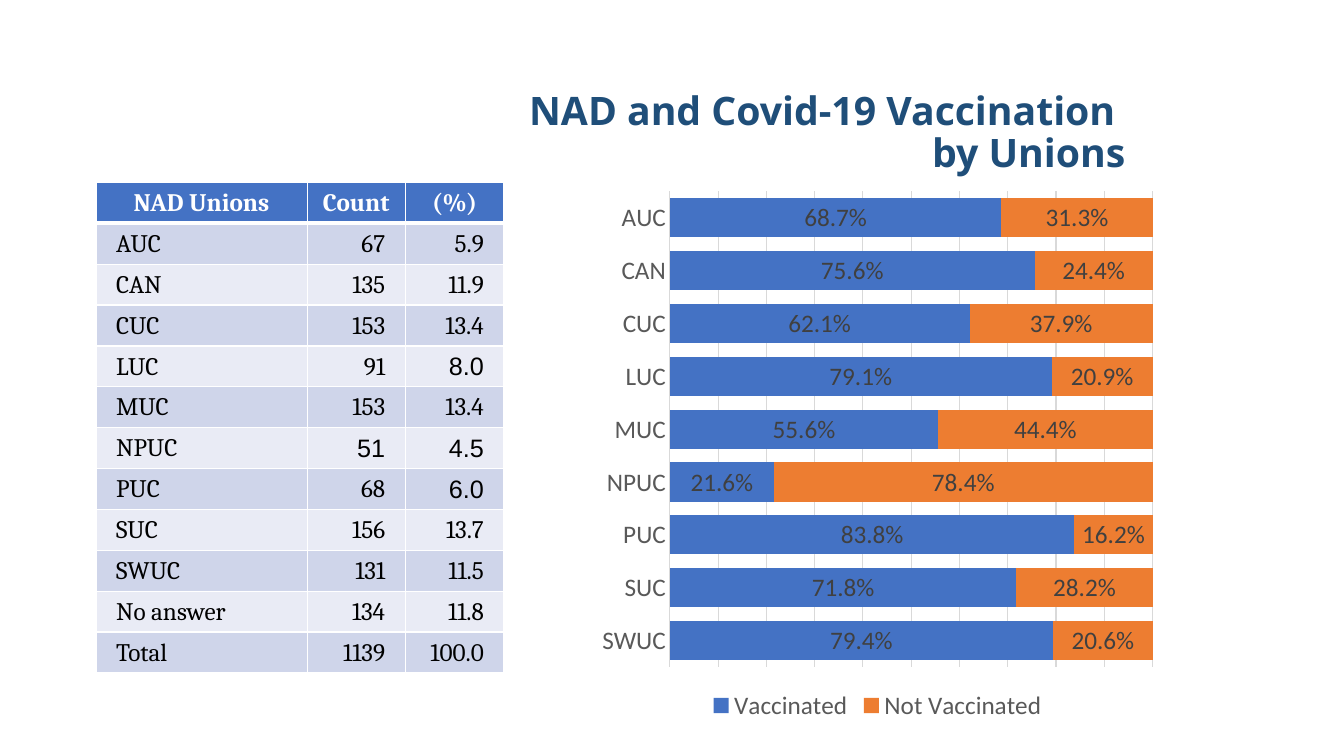
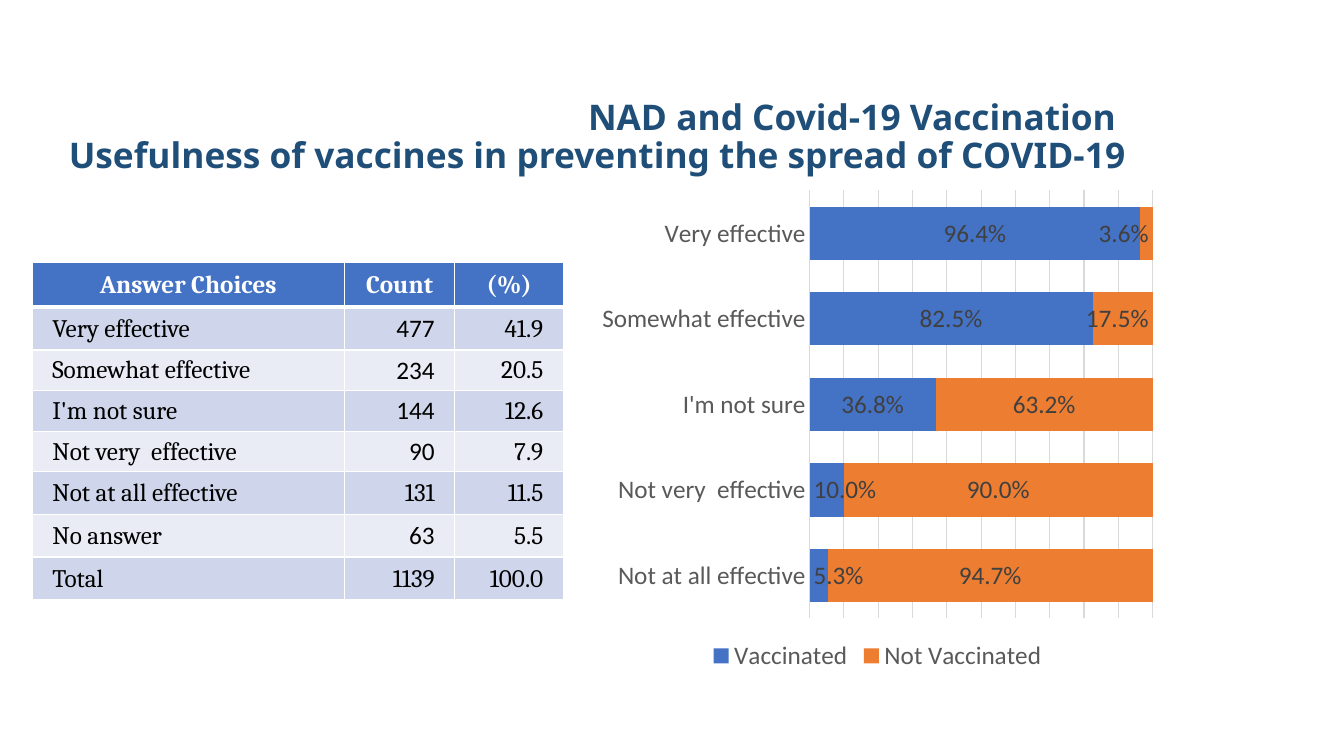
"""Build two slides on vaccination, each with a title, a count table and a stacked bar chart."""
from dataclasses import dataclass, field
from typing import Optional

from lxml.etree import SubElement
from pptx import Presentation
from pptx.chart.data import CategoryChartData
from pptx.dml.color import RGBColor
from pptx.enum.chart import XL_CHART_TYPE as ChartType
from pptx.enum.chart import XL_LABEL_POSITION as LabelPos
from pptx.enum.chart import XL_LEGEND_POSITION as LegendPos
from pptx.enum.chart import XL_TICK_MARK as Tick
from pptx.enum.text import MSO_ANCHOR as Anchor
from pptx.enum.text import PP_ALIGN as Align
from pptx.oxml.ns import qn
from pptx.util import Pt


@dataclass(frozen=True)
class Theme:
    """Colours, fonts and type sizes of the deck."""
    title: str = "1F4E79"
    white: str = "FFFFFF"
    black: str = "000000"
    header: str = "4472C4"
    bands: tuple[str, str] = ("CFD5EA", "E9EBF5")
    series: tuple[str, str] = ("4472C4", "ED7D31")
    axis_text: str = "595959"
    label_text: str = "404040"
    grid: str = "D9D9D9"
    title_font: str = "Noto Sans"
    table_font: str = "Cambria"
    chart_font: str = "Calibri"
    alt_font: str = "Arial"
    body_size: float = 18
    chart_size: float = 10


THEME = Theme()
SERIES_NAMES = ("Vaccinated", "Not Vaccinated")
PERCENT = "0.0%"


@dataclass(frozen=True)
class Box:
    """Position and size in points."""
    left: float
    top: float
    width: float
    height: float

    def emu(self) -> tuple[Pt, Pt, Pt, Pt]:
        """Return the four lengths for python-pptx."""
        return Pt(self.left), Pt(self.top), Pt(self.width), Pt(self.height)


@dataclass(frozen=True)
class Row:
    """One answer: table values, their fonts and the vaccinated share if charted."""
    label: str
    count: str
    percent: str
    vaccinated: Optional[float] = None
    count_font: str = THEME.table_font
    percent_font: str = THEME.table_font


@dataclass(frozen=True)
class Survey:
    """Everything that differs between the slides."""
    title: str
    title_size: float
    title_box: Box
    heading: str
    rows: list[Row]
    table_at: tuple[float, float]
    col_widths: tuple[float, ...]
    row_heights: tuple[float, ...]
    chart_box: Box
    gap: int
    moved_labels: dict[tuple[int, int], LabelPos] = field(default_factory=dict)


def style_font(font, size: float, color: str, name: str, bold: bool = False) -> None:
    """Set size, colour, typeface and weight."""
    font.size, font.name, font.bold = Pt(size), name, bold
    font.color.rgb = RGBColor.from_string(color)


def add_title(s, survey: Survey) -> None:
    """Place and format the title placeholder."""
    sp = s.shapes.title
    sp.left, sp.top, sp.width, sp.height = survey.title_box.emu()
    tf = sp.text_frame
    tf.word_wrap, tf.vertical_anchor = True, Anchor.BOTTOM
    p = tf.paragraphs[0]
    p.text = survey.title
    p.alignment, p.line_spacing = Align.RIGHT, 0.9
    style_font(p.font, survey.title_size, THEME.title, THEME.title_font, True)


def add_borders(cell, bottom: float) -> None:
    """Draw white borders of one point, with a given bottom width."""
    tc_pr = cell._tc.get_or_add_tcPr()
    for side, width in (("L", 1), ("R", 1), ("T", 1), ("B", bottom)):
        ln = SubElement(tc_pr, qn(f"a:ln{side}"), w=str(int(Pt(width))))
        SubElement(SubElement(ln, qn("a:solidFill")), qn("a:srgbClr"), val=THEME.white)


def fill_cell(cell, text: str, font: str, align: Align, row: int) -> None:
    """Write and format one cell; row 0 is the header."""
    header = row == 0
    add_borders(cell, 3 if header or row == 0 else 1)
    cell.fill.solid()
    fill = THEME.header if header else THEME.bands[(row - 1) % 2]
    cell.fill.fore_color.rgb = RGBColor.from_string(fill)
    cell.vertical_anchor = Anchor.MIDDLE
    cell.margin_left = Pt(14.4 if align == Align.LEFT else 0.7)
    cell.margin_right = Pt(14.4 if align == Align.RIGHT else 0.7)
    cell.margin_top, cell.margin_bottom = Pt(0.7), Pt(0)
    p = cell.text_frame.paragraphs[0]
    p.text, p.alignment = text, align
    style_font(p.font, THEME.body_size, THEME.white if header else THEME.black, font, header)


def add_count_table(s, survey: Survey) -> None:
    """Add the table of counts and percentages."""
    box = Box(*survey.table_at, sum(survey.col_widths), sum(survey.row_heights))
    table = s.shapes.add_table(len(survey.rows) + 1, 3, *box.emu()).table
    for column, width in zip(table.columns, survey.col_widths):
        column.width = Pt(width)
    for line, height in zip(table.rows, survey.row_heights):
        line.height = Pt(height)
    for c, text in enumerate((survey.heading, "Count", "(%)")):
        fill_cell(table.cell(0, c), text, THEME.table_font, Align.CENTER, 0)
    for r, row in enumerate(survey.rows, 1):
        fill_cell(table.cell(r, 0), row.label, THEME.table_font, Align.LEFT, r)
        fill_cell(table.cell(r, 1), row.count, row.count_font, Align.RIGHT, r)
        fill_cell(table.cell(r, 2), row.percent, row.percent_font, Align.RIGHT, r)


def style_line(line) -> None:
    """Format an axis or grid line."""
    line.color.rgb = RGBColor.from_string(THEME.grid)
    line.width = Pt(0.75)


def add_share_chart(s, survey: Survey) -> None:
    """Add the stacked chart of vaccinated and not vaccinated shares."""
    charted = [row for row in survey.rows if row.vaccinated is not None]
    data = CategoryChartData(number_format=PERCENT)
    data.categories = [row.label for row in charted]
    shares = [row.vaccinated for row in charted]
    data.add_series(SERIES_NAMES[0], shares)
    data.add_series(SERIES_NAMES[1], [round(1 - share, 3) for share in shares])
    chart = s.shapes.add_chart(ChartType.BAR_STACKED_100, *survey.chart_box.emu(), data).chart
    style_font(chart.font, THEME.chart_size, THEME.black, THEME.chart_font)
    chart.has_title = False
    chart.has_legend = True
    chart.legend.position, chart.legend.include_in_layout = LegendPos.BOTTOM, False
    style_font(chart.legend.font, THEME.body_size, THEME.axis_text, THEME.chart_font)

    cats, vals = chart.category_axis, chart.value_axis
    cats.reverse_order = True
    cats.major_tick_mark = cats.minor_tick_mark = Tick.NONE
    style_font(cats.tick_labels.font, THEME.body_size, THEME.axis_text, THEME.chart_font)
    style_line(cats.format.line)
    vals.visible, vals.has_major_gridlines, vals.major_unit = False, True, 0.1
    style_line(vals.major_gridlines.format.line)

    plot = chart.plots[0]
    plot.gap_width, plot.overlap, plot.vary_by_categories = survey.gap, 100, False
    for series, color in zip(plot.series, THEME.series):
        series.format.fill.solid()
        series.format.fill.fore_color.rgb = RGBColor.from_string(color)
        labels = series.data_labels
        labels.show_value = True
        labels.number_format, labels.number_format_is_linked = PERCENT, False
        style_font(labels.font, THEME.body_size, THEME.label_text, THEME.chart_font)
    for (series_no, point_no), position in survey.moved_labels.items():
        label = plot.series[series_no].points[point_no].data_label
        style_font(label.font, THEME.body_size, THEME.label_text, THEME.chart_font)
        label.position = position


SURVEYS = [
    Survey(
        title="NAD and Covid-19 Vaccination \vby Unions",
        title_size=28,
        title_box=Box(129, 37.5, 682, 92),
        heading="NAD Unions",
        rows=[
            Row("AUC", "67", "5.9", 0.687),
            Row("CAN", "135", "11.9", 0.756),
            Row("CUC", "153", "13.4", 0.621),
            Row("LUC", "91", "8.0", 0.791, percent_font=THEME.alt_font),
            Row("MUC", "153", "13.4", 0.556),
            Row("NPUC", "51", "4.5", 0.216, THEME.alt_font, THEME.alt_font),
            Row("PUC", "68", "6.0", 0.838, percent_font=THEME.alt_font),
            Row("SUC", "156", "13.7", 0.718),
            Row("SWUC", "131", "11.5", 0.794),
            Row("No answer", "134", "11.8"),
            Row("Total", "1139", "100.0"),
        ],
        table_at=(68.5, 130.3),
        col_widths=(151, 70, 70.5),
        row_heights=(29.2,) * 12,
        chart_box=Box(422, 129, 409.5, 389.5),
        gap=35,
    ),
    Survey(
        title="NAD and Covid-19 Vaccination \vUsefulness of vaccines in preventing the spread of COVID-19",
        title_size=25.2,
        title_box=Box(23, 37.5, 788, 92),
        heading="Answer Choices",
        rows=[
            Row("Very effective", "477", "41.9", 0.964, THEME.chart_font),
            Row("Somewhat effective", "234", "20.5", 0.825, THEME.chart_font),
            Row("I'm not sure", "144", "12.6", 0.368, THEME.chart_font),
            Row("Not very  effective", "90", "7.9", 0.1, THEME.chart_font),
            Row("Not at all effective", "131", "11.5", 0.053),
            Row("No answer", "63", "5.5", count_font=THEME.chart_font),
            Row("Total", "1139", "100.0"),
        ],
        table_at=(23, 187.5),
        col_widths=(223, 79, 77.5),
        row_heights=(32, 30.5, 29, 29, 29, 30.5, 30.5, 30.5),
        chart_box=Box(422, 129, 409.5, 354),
        gap=61,
        moved_labels={
            (0, 3): LabelPos.INSIDE_BASE,
            (0, 4): LabelPos.INSIDE_BASE,
            (1, 0): LabelPos.INSIDE_END,
            (1, 1): LabelPos.INSIDE_END,
        },
    ),
]


def main() -> None:
    """Build and save the deck."""
    prs = Presentation()
    prs.slide_width, prs.slide_height = Pt(960), Pt(540)
    for survey in SURVEYS:
        s = prs.slides.add_slide(prs.slide_layouts[5])
        add_share_chart(s, survey)
        add_count_table(s, survey)
        add_title(s, survey)
    prs.save("out.pptx")


if __name__ == "__main__":
    main()
